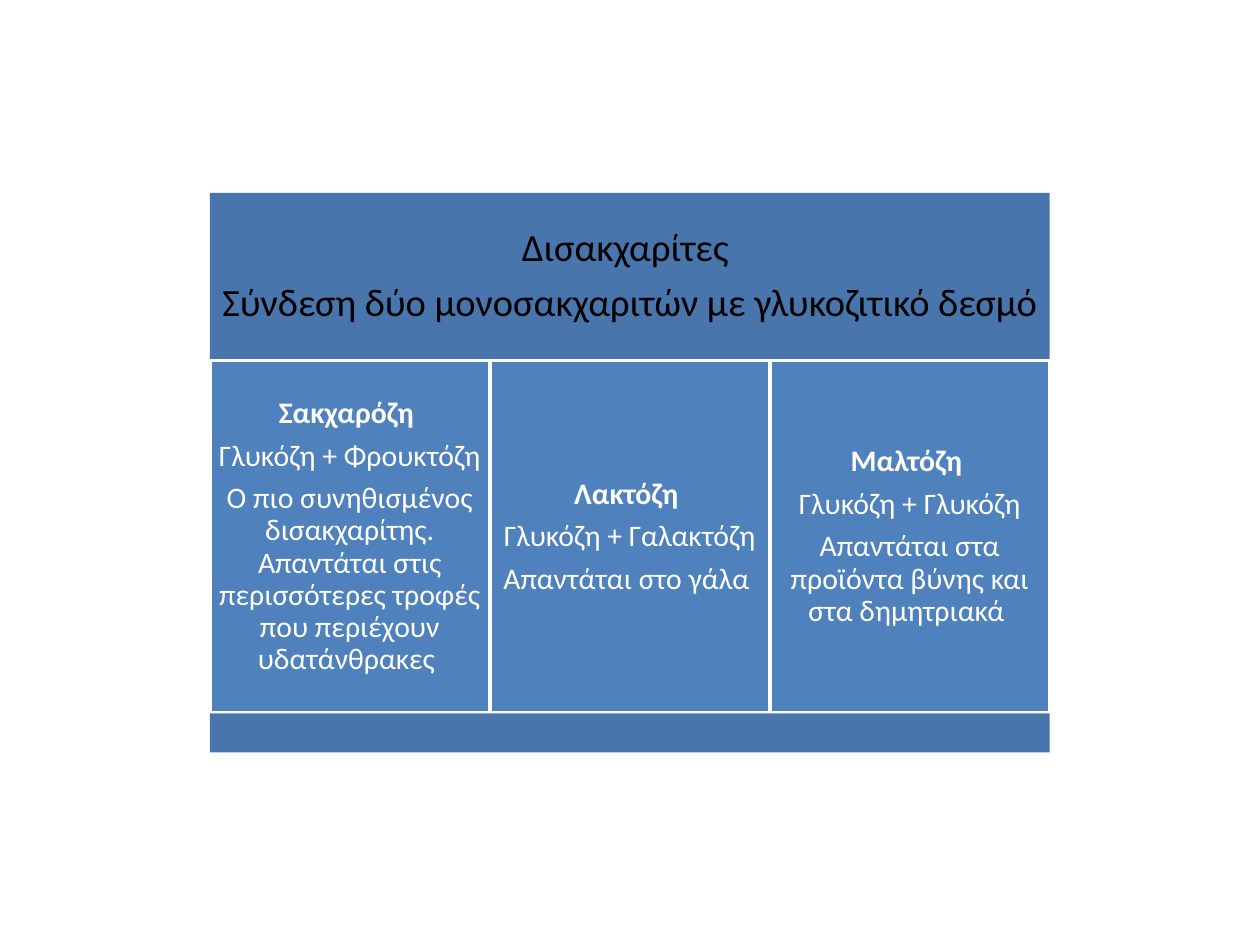
from dataclasses import dataclass

from pptx import Presentation
from pptx.dml.color import RGBColor
from pptx.enum.shapes import MSO_SHAPE
from pptx.enum.text import MSO_ANCHOR, PP_ALIGN
from pptx.shapes.autoshape import Shape
from pptx.slide import Slide
from pptx.util import Cm, Pt

COLORS = {"band": "4875AC", "column": "4F81BD", "white": "FFFFFF", "black": "000000"}
LEFT, TOP, WIDTH = 4.23, 3.89, 16.93
HEADER_HEIGHT, COLUMN_HEIGHT, FOOTER_HEIGHT = 3.38, 7.11, 0.79


@dataclass(frozen=True)
class BlockStyle:
    fill: str
    text: str
    size: int
    inset: float
    outlined: bool = False
    bold_title: bool = False


BAND = BlockStyle("band", "black", 22, 0.23)
COLUMN = BlockStyle("column", "white", 17, 0.17, outlined=True, bold_title=True)

HEADER_LINES = ("Δισακχαρίτες ", "Σύνδεση δύο μονοσακχαριτών με γλυκοζιτικό δεσμό")
DISACCHARIDES = (
    (
        "Σακχαρόζη ",
        "Γλυκόζη + Φρουκτόζη",
        "Ο πιο συνηθισμένος δισακχαρίτης. Απαντάται στις περισσότερες τροφές "
        "που περιέχουν υδατάνθρακες ",
    ),
    ("Λακτόζη ", "Γλυκόζη + Γαλακτόζη", "Απαντάται στο γάλα "),
    (
        "Μαλτόζη ",
        "Γλυκόζη + Γλυκόζη",
        "Απαντάται στα προϊόντα βύνης και στα δημητριακά ",
    ),
)


def color(name: str) -> RGBColor:
    return RGBColor.from_string(COLORS[name])


def apply_format(target: object, values: dict[str, object]) -> None:
    for name, value in values.items():
        setattr(target, name, value)


def write_lines(shape: Shape, lines: tuple[str, ...], style: BlockStyle) -> None:
    text_frame = shape.text_frame
    sides = ("left", "top", "right", "bottom")
    apply_format(text_frame, {f"margin_{side}": Cm(style.inset) for side in sides})
    apply_format(
        text_frame, {"word_wrap": True, "vertical_anchor": MSO_ANCHOR.MIDDLE}
    )
    text_frame.text = "\n".join(lines)
    for index, paragraph in enumerate(text_frame.paragraphs):
        apply_format(
            paragraph,
            {
                "alignment": PP_ALIGN.CENTER,
                "line_spacing": 0.9,
                "space_after": Pt(style.size * 0.35),
            },
        )
        for run in paragraph.runs:
            apply_format(
                run.font,
                {
                    "name": "Calibri",
                    "size": Pt(style.size),
                    "bold": style.bold_title and index == 0,
                },
            )
            run.font.color.rgb = color(style.text)


def add_block(
    slide: Slide,
    left: float,
    top: float,
    width: float,
    height: float,
    style: BlockStyle,
    lines: tuple[str, ...] = (),
) -> None:
    shape = slide.shapes.add_shape(
        MSO_SHAPE.RECTANGLE, Cm(left), Cm(top), Cm(width), Cm(height)
    )
    shape.shadow.inherit = False
    shape.fill.solid()
    shape.fill.fore_color.rgb = color(style.fill)
    if style.outlined:
        shape.line.color.rgb = color("white")
        shape.line.width = Pt(2)
    else:
        shape.line.fill.background()
    if lines:
        write_lines(shape, lines, style)


def main() -> None:
    presentation = Presentation()
    apply_format(presentation, {"slide_width": Cm(25.4), "slide_height": Cm(19.05)})
    slide = presentation.slides.add_slide(presentation.slide_layouts[6])

    add_block(slide, LEFT, TOP, WIDTH, HEADER_HEIGHT, BAND, HEADER_LINES)
    column_top = TOP + HEADER_HEIGHT
    column_width = WIDTH / len(DISACCHARIDES)
    for index, lines in enumerate(DISACCHARIDES):
        column_left = LEFT + index * column_width
        add_block(
            slide, column_left, column_top, column_width, COLUMN_HEIGHT, COLUMN, lines
        )
    add_block(slide, LEFT, column_top + COLUMN_HEIGHT, WIDTH, FOOTER_HEIGHT, BAND)

    presentation.save("out.pptx")


if __name__ == "__main__":
    main()
